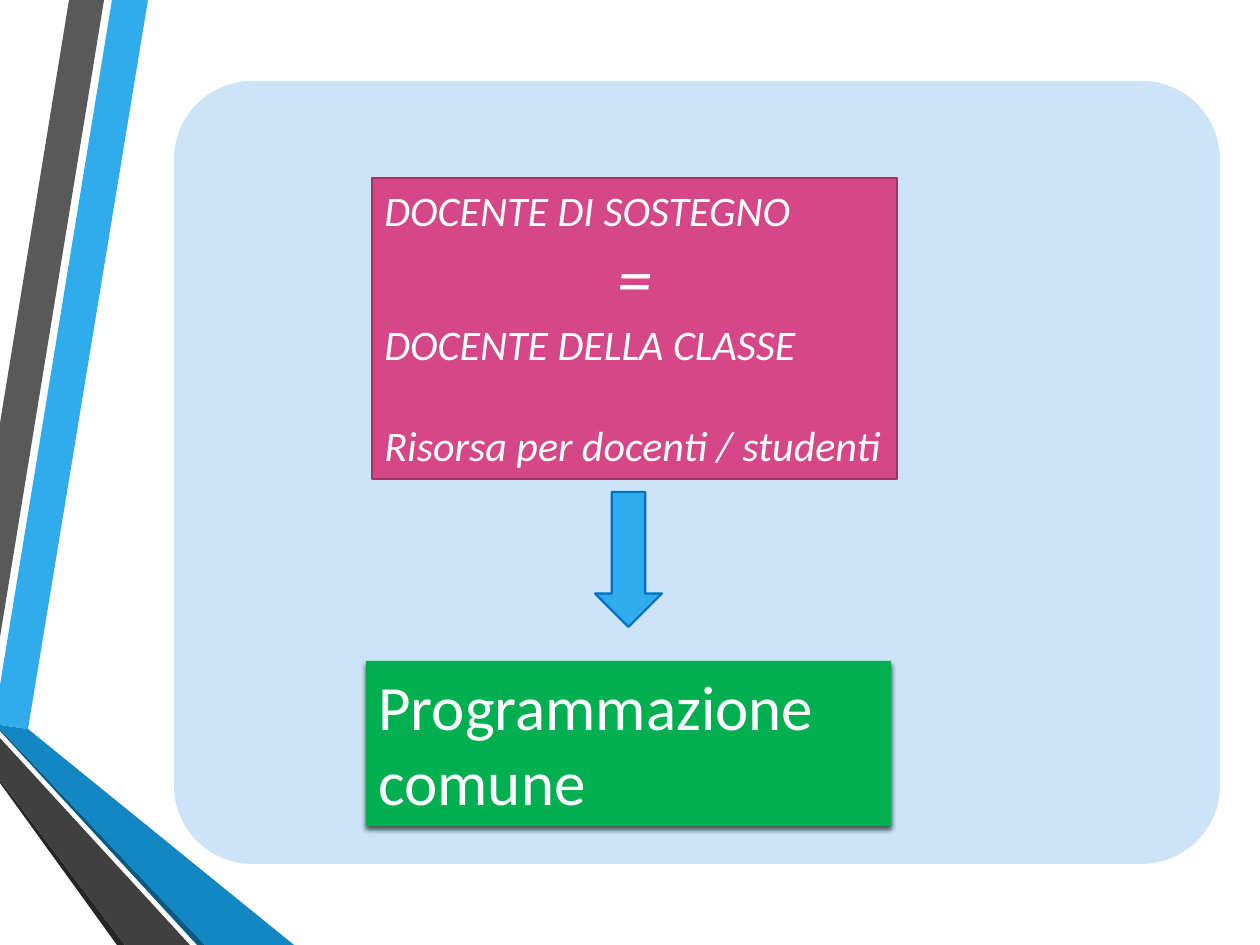
import pptx
import pptx.dml.color
import pptx.enum.shapes
import pptx.enum.text
import pptx.oxml
import pptx.oxml.ns
import pptx.util

SCALE = 914400 / 126
SHAPES = pptx.enum.shapes.MSO_SHAPE
ALIGN = pptx.enum.text.PP_ALIGN

SHADOW = (
    f'<a:effectLst {pptx.oxml.ns.nsdecls("a")}>'
    '<a:outerShdw blurRad="38100" dist="25400" dir="5400000" rotWithShape="0">'
    '<a:srgbClr val="000000"><a:alpha val="64000"/></a:srgbClr>'
    '</a:outerShdw></a:effectLst>'
)

RIBBONS = [
    ("30ACEC", [(0, 685), (0, 725), (28, 729), (148, 0), (112, 0)]),
    ("595959", [(104, 0), (69, 0), (0, 423), (0, 637)]),
    ("262626", [(0, 780), (0, 783), (117, 945), (125, 945)]),
    ("0C5A82", [(0, 729), (0, 731), (197, 945), (205, 945)]),
    ("1287C3", [(0, 729), (205, 945), (294, 945), (28, 729), (0, 725)]),
    ("404040", [(0, 780), (125, 945), (190, 945), (0, 738)]),
]


def px(length):
    return pptx.util.Emu(round(length * SCALE))


def color(hex_text):
    return pptx.dml.color.RGBColor.from_string(hex_text)


def paint(shape, fill, line=None):
    shape.shadow.inherit = False
    shape.fill.solid()
    shape.fill.fore_color.rgb = color(fill)
    if line:
        shape.line.color.rgb = color(line)
        shape.line.width = pptx.util.Pt(1.25)
    else:
        shape.line.fill.background()


def add_block(page, kind, box, fill, line=None):
    shape = page.shapes.add_shape(kind, *map(px, box))
    paint(shape, fill, line)
    return shape


def write_lines(shape, lines, italic=False):
    frame = shape.text_frame
    frame.word_wrap = True
    frame.vertical_anchor = pptx.enum.text.MSO_ANCHOR.TOP
    for index, (text, size, align, gap) in enumerate(lines):
        para = frame.add_paragraph() if index else frame.paragraphs[0]
        para.text = text
        para.alignment = align
        para.space_before = pptx.util.Pt(gap)
        para.font.name = "Calibri"
        para.font.size = pptx.util.Pt(size)
        para.font.italic = italic
        para.font.color.rgb = color("FFFFFF")


def draw_ribbons(page, left, top):
    for fill, points in RIBBONS:
        builder = page.shapes.build_freeform(*points[0], scale=SCALE)
        builder.add_line_segments(points[1:], close=True)
        paint(builder.convert_to_shape(px(left), px(top)), fill)


def draw_panel(page, box):
    left, top, width, height = box
    panel = add_block(page, SHAPES.ROUNDED_RECTANGLE, box, "CDE3F8")
    panel.adjustments[0] = 0.1

    add_block(page, SHAPES.DOWN_ARROW, (left + 421, top + 411, 67, 135),
              "30ACEC", "0070C0")

    planning = add_block(page, SHAPES.RECTANGLE,
                         (left + 192, top + 580, 525, 165), "00B050")
    planning.shadow.inherit = True
    planning._element.spPr.append(pptx.oxml.parse_xml(SHADOW))
    write_lines(planning, [("Programmazione comune", 36, ALIGN.LEFT, 0)])

    teachers = add_block(page, SHAPES.RECTANGLE,
                         (left + 198, top + 97, 525, 301), "D64787", "9E3564")
    write_lines(teachers, [
        ("DOCENTE DI SOSTEGNO", 24, ALIGN.LEFT, 0),
        ("=", 40, ALIGN.CENTER, 0),
        ("DOCENTE DELLA CLASSE", 24, ALIGN.LEFT, 0),
        ("Risorsa per docenti / studenti", 24, ALIGN.LEFT, 29),
    ], italic=True)


def main():
    deck = pptx.Presentation()
    deck.slide_width, deck.slide_height = px(1260), px(945)
    page = deck.slides.add_slide(deck.slide_layouts[6])
    draw_ribbons(page, 0, 0)
    draw_panel(page, (174, 81, 1046, 783))
    deck.save("out.pptx")


if __name__ == "__main__":
    main()
